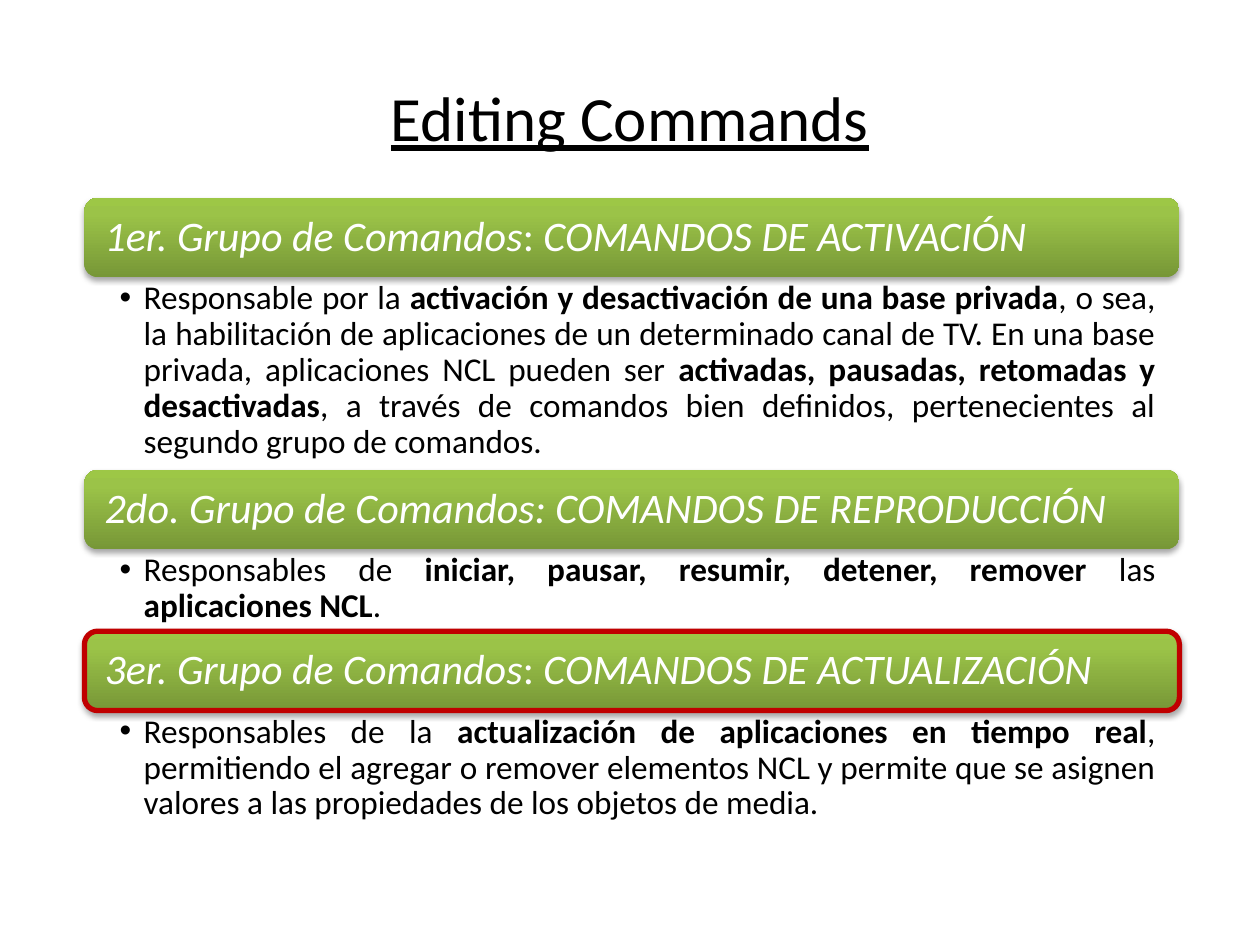
from copy import deepcopy

from lxml.etree import SubElement
from pptx import Presentation
from pptx.dml.color import RGBColor
from pptx.enum.shapes import MSO_SHAPE
from pptx.enum.text import MSO_ANCHOR, PP_ALIGN
from pptx.oxml.ns import qn
from pptx.util import Inches, Pt

TITLE = "Editing Commands"
# Heading and body runs are (text, emphasised): italic in headings, bold in bodies.
GROUPS = [
    {
        "heading": [("1er. Grupo de Comandos", True), (": ", False),
                    ("COMANDOS DE ACTIVACIÓN", True)],
        "body": [
            ("Responsable por la ", False),
            ("activación y desactivación de una base privada", True),
            (", o sea, la habilitación de aplicaciones de un determinado canal de TV. "
             "En una base privada, aplicaciones NCL pueden ser ", False),
            ("activadas, pausadas, retomadas y desactivadas", True),
            (", a través de comandos bien definidos, pertenecientes al segundo grupo "
             "de comandos.", False),
        ],
        "body_height": 1.53,
        "outlined": False,
    },
    {
        "heading": [("2do. Grupo de Comandos: COMANDOS DE REPRODUCCIÓN", True)],
        "body": [
            ("Responsables de ", False),
            ("iniciar, pausar, resumir, detener, remover", True),
            (" las ", False),
            ("aplicaciones NCL", True),
            (".", False),
        ],
        "body_height": 0.65,
        "outlined": False,
    },
    {
        "heading": [("3er. Grupo de Comandos", True), (": ", False),
                    ("COMANDOS DE ACTUALIZACIÓN", True)],
        "body": [
            ("Responsables de la ", False),
            ("actualización de aplicaciones en tiempo real", True),
            (", permitiendo el agregar o remover elementos NCL y permite que se asignen "
             "valores a las propiedades de los objetos de media.", False),
        ],
        "body_height": 0.95,
        "outlined": True,
    },
]

COLORS = {"text": "000000", "heading": "FFFFFF", "outline": "C00000", "shadow": "000000"}
GRADIENT = [(0, "779737"), (0.8, "9BC348"), (1, "9DC746")]
FONT = "Calibri"
LEFT, TOP, WIDTH, BAND_HEIGHT = 0.67, 1.57, 8.69, 0.63


def rgb(name):
    return RGBColor.from_string(COLORS[name])


def set_frame(tf, anchor, margins):
    """Margins are left, top, right, bottom in inches."""
    tf.word_wrap = True
    tf.vertical_anchor = anchor
    for side, size in zip(("left", "top", "right", "bottom"), margins):
        setattr(tf, f"margin_{side}", Inches(size))


def add_runs(p, runs, size, color, emphasis):
    p.line_spacing = 0.9
    for text, emphasised in runs:
        r = p.add_run()
        r.text = text
        for name, value in {"name": FONT, "size": Pt(size), emphasis: emphasised}.items():
            setattr(r.font, name, value)
        r.font.color.rgb = rgb(color)


def fill_gradient(sp):
    sp.fill.gradient()
    sp.fill.gradient_angle = 90
    stops = sp._element.spPr.find(qn("a:gradFill")).find(qn("a:gsLst"))
    stops.append(deepcopy(stops[-1]))
    for stop, (position, color) in zip(sp.fill.gradient_stops, GRADIENT):
        stop.position = position
        stop.color.rgb = RGBColor.from_string(color)


def add_shadow(sp):
    sp.shadow.inherit = False
    effects = sp._element.spPr.find(qn("a:effectLst"))
    shadow = SubElement(effects, qn("a:outerShdw"), blurRad=str(Pt(3.1)),
                        dist=str(Pt(1.8)), dir="5400000", rotWithShape="0")
    color = SubElement(shadow, qn("a:srgbClr"), val=COLORS["shadow"])
    SubElement(color, qn("a:alpha"), val="35000")


def add_band(slide, top, runs, outlined):
    sp = slide.shapes.add_shape(MSO_SHAPE.ROUNDED_RECTANGLE, Inches(LEFT), Inches(top),
                                Inches(WIDTH), Inches(BAND_HEIGHT))
    fill_gradient(sp)
    if outlined:
        sp.line.color.rgb = rgb("outline")
        sp.line.width = Pt(3)
    else:
        sp.line.fill.background()
    add_shadow(sp)
    set_frame(sp.text_frame, MSO_ANCHOR.MIDDLE, (0.13, 0.1, 0.13, 0.1))
    p = sp.text_frame.paragraphs[0]
    p.alignment = PP_ALIGN.LEFT
    add_runs(p, runs, 24, "heading", "italic")


def add_body(slide, top, height, runs):
    box = slide.shapes.add_textbox(Inches(LEFT), Inches(top), Inches(WIDTH), Inches(height))
    set_frame(box.text_frame, MSO_ANCHOR.TOP, (0.28, 0.03, 0.19, 0.03))
    p = box.text_frame.paragraphs[0]
    p.alignment = PP_ALIGN.JUSTIFY
    p.level = 1
    add_runs(p, runs, 19, "text", "bold")
    pPr = p._p.get_or_add_pPr()
    pPr.set("marL", str(Inches(0.19)))
    pPr.set("indent", str(-Inches(0.19)))
    SubElement(pPr, qn("a:buFont"), typeface="Arial")
    SubElement(pPr, qn("a:buChar"), char="•")


def add_title(slide):
    title = slide.shapes.title
    title.left, title.top, title.width, title.height = map(Inches, (0.5, 0.3, 9, 1.25))
    title.text_frame.vertical_anchor = MSO_ANCHOR.MIDDLE
    p = title.text_frame.paragraphs[0]
    p.alignment = PP_ALIGN.CENTER
    r = p.add_run()
    r.text = TITLE
    for name, value in {"name": FONT, "size": Pt(36), "underline": True}.items():
        setattr(r.font, name, value)
    r.font.color.rgb = rgb("text")


def main():
    prs = Presentation()
    prs.slide_width, prs.slide_height = Inches(10), Inches(7.5)
    slide = prs.slides.add_slide(prs.slide_layouts[5])
    add_title(slide)
    top = TOP
    for group in GROUPS:
        add_band(slide, top, group["heading"], group["outlined"])
        top += BAND_HEIGHT
        add_body(slide, top, group["body_height"], group["body"])
        top += group["body_height"]
    prs.save("out.pptx")


if __name__ == "__main__":
    main()
